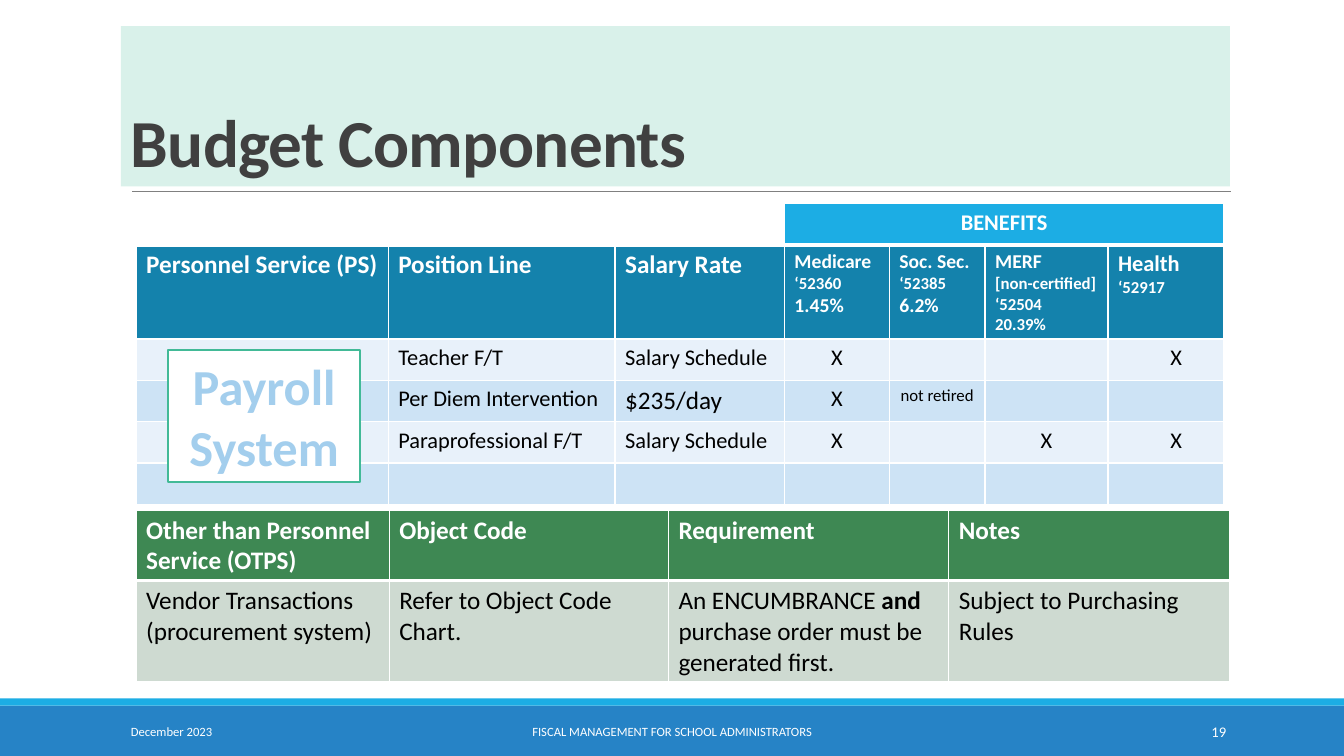
from lxml import etree
from pptx import Presentation
from pptx.dml.color import RGBColor
from pptx.enum.shapes import MSO_CONNECTOR, MSO_SHAPE
from pptx.enum.text import MSO_ANCHOR, PP_ALIGN
from pptx.oxml.ns import qn
from pptx.util import Pt

RECT, STRAIGHT = MSO_SHAPE.RECTANGLE, MSO_CONNECTOR.STRAIGHT
LEFT, CENTER, RIGHT = PP_ALIGN.LEFT, PP_ALIGN.CENTER, PP_ALIGN.RIGHT
TOP, MIDDLE, BOTTOM = MSO_ANCHOR.TOP, MSO_ANCHOR.MIDDLE, MSO_ANCHOR.BOTTOM

WHITE, BLACK = "FFFFFF", "000000"
PS_HEAD, PS_LIGHT, PS_DARK = "1482AC", "E8F1FA", "CDE3F5"
SKY, BLUE = "1CADE4", "2683C6"
OTPS_HEAD, OTPS_BODY = "3E8853", "CEDAD1"

PS_COLS = [250, 225, 168, 104, 95, 122, 115]
PS_ROWS = [41, 93, 41, 41, 41, 41]
# Each cell lists its paragraphs as (text, size)
PS_HEADERS = [
    [("Personnel Service (PS)", 18)],
    [("Position Line", 18)],
    [("Salary Rate", 18)],
    [("Medicare", 14), ("‘52360", 12), ("1.45%", 14)],
    [("Soc. Sec.", 14), ("‘52385", 12), ("6.2%", 14)],
    [("MERF", 14), ("[non-certified]", 12), ("‘52504", 12), ("20.39%", 12)],
    [("Health", 16), ("‘52917", 12)],
]
PS_POSITIONS = [
    ["", "Teacher F/T", "Salary Schedule", "X", "", "", "X"],
    ["", "Per Diem Intervention", "$235/day", "X", "not retired", "", ""],
    ["", "Paraprofessional F/T", "Salary Schedule", "X", "", "X", "X"],
    [""] * 7,
]
PS_SIZES = {"$235/day": 18, "not retired": 12}

OTPS_COLS = [251, 277, 278, 279]
OTPS_ROWS = [70, 100]
OTPS_HEADERS = ["Other than Personnel Service (OTPS)", "Object Code",
                "Requirement", "Notes"]
# Asterisks enclose bold words
OTPS_DETAILS = ["Vendor Transactions (procurement system)",
                "Refer to Object Code Chart.",
                "An ENCUMBRANCE *and* purchase order must be generated first.",
                "Subject to Purchasing Rules"]


def px(n):
    return n * 9144


def rgb(color):
    return RGBColor.from_string(color)


def write(tf, paragraphs, color, bold=False, align=LEFT, anchor=TOP):
    tf.word_wrap = True
    tf.vertical_anchor = anchor
    for i, (text, size) in enumerate(paragraphs):
        p = tf.paragraphs[0] if i == 0 else tf.add_paragraph()
        p.alignment = align
        p.font.size = Pt(size)
        for j, part in enumerate(text.split("*")):
            r = p.add_run()
            r.text = part
            r.font.name, r.font.size = "Calibri", Pt(size)
            r.font.bold = bold or j % 2 == 1
            r.font.color.rgb = rgb(color)


def add_box(s, box, fill, line=None):
    sp = s.shapes.add_shape(RECT, *map(px, box))
    sp.shadow.inherit = False
    sp.fill.solid()
    sp.fill.fore_color.rgb = rgb(fill)
    if line:
        sp.line.color.rgb = rgb(line)
        sp.line.width = Pt(1.25)
    else:
        sp.line.fill.background()
    return sp


def add_label(s, box, text, size, align):
    tb = s.shapes.add_textbox(*map(px, box))
    write(tb.text_frame, [(text, size)], WHITE, align=align, anchor=MIDDLE)


def add_grid(s, left, top, cols, rows):
    frame = s.shapes.add_table(len(rows), len(cols), px(left), px(top),
                               px(sum(cols)), px(sum(rows)))
    table = frame.table
    table.first_row = table.horz_banding = False
    for col, width in zip(table.columns, cols):
        col.width = px(width)
    for row, height in zip(table.rows, rows):
        row.height = px(height)
    return table


def style_cell(cell, fill, bottom=1):
    if fill:
        cell.fill.solid()
        cell.fill.fore_color.rgb = rgb(fill)
    else:
        cell.fill.background()
    # White borders come before the fill in the cell properties
    tcPr = cell._tc.get_or_add_tcPr()
    for i, side in enumerate("LRTB"):
        width = bottom if side == "B" else 1
        ln = etree.Element(qn(f"a:ln{side}"), w=str(Pt(width)))
        solid = etree.SubElement(ln, qn("a:solidFill"))
        etree.SubElement(solid, qn("a:srgbClr"), val=WHITE)
        tcPr.insert(i, ln)


def add_title(s, left, top, width, height):
    sp = add_box(s, (left, top, width, height), "D9F1EA")
    write(sp.text_frame, [("Budget Components", 48)], "404040", True,
          anchor=BOTTOM)
    p = sp.text_frame.paragraphs[0]
    p.line_spacing = 0.85
    p.runs[0].font._element.set("spc", "-50")
    # Rule under the title
    y = px(top + height + 5)
    rule = s.shapes.add_connector(STRAIGHT, px(left + 11), y,
                                  px(left + width + 1), y)
    rule.line.color.rgb = rgb("808080")
    rule.line.width = Pt(0.5)
    etree.SubElement(rule._element.spPr, qn("a:effectLst"))


def add_personnel(s, left, top):
    table = add_grid(s, left, top, PS_COLS, PS_ROWS)
    # Benefits band over the last four columns
    for c in range(len(PS_COLS)):
        style_cell(table.cell(0, c), SKY if c > 2 else None, 3)
    table.cell(0, 3).merge(table.cell(0, 6))
    write(table.cell(0, 3).text_frame, [("BENEFITS", 16)], WHITE, True, CENTER)
    # Column headings
    for c, paragraphs in enumerate(PS_HEADERS):
        cell = table.cell(1, c)
        style_cell(cell, PS_HEAD)
        write(cell.text_frame, paragraphs, WHITE, True)
    # Positions in banded rows
    for r, values in enumerate(PS_POSITIONS):
        for c, text in enumerate(values):
            cell = table.cell(r + 2, c)
            style_cell(cell, PS_DARK if r % 2 else PS_LIGHT)
            if c == 6:
                cell.margin_left = px(30)
            if text:
                write(cell.text_frame, [(text, PS_SIZES.get(text, 16))], BLACK,
                      align=CENTER if c > 2 else LEFT)
    # Payroll label over the first column
    sp = add_box(s, (left + 32, top + 145, 190, 131), WHITE, "42BA97")
    write(sp.text_frame, [("Payroll System", 36)], "A3CEED", True, CENTER,
          MIDDLE)


def add_other(s, left, top):
    table = add_grid(s, left, top, OTPS_COLS, OTPS_ROWS)
    for c, (header, detail) in enumerate(zip(OTPS_HEADERS, OTPS_DETAILS)):
        head, body = table.cell(0, c), table.cell(1, c)
        style_cell(head, OTPS_HEAD, 3)
        write(head.text_frame, [(header, 18)], WHITE, True)
        style_cell(body, OTPS_BODY)
        write(body.text_frame, [(detail, 18)], BLACK)


def add_footer(s, left, top, width, height):
    add_box(s, (left, top + 7, width, height - 7), BLUE)
    add_box(s, (left, top, width, 7), SKY)
    y = top + 13
    add_label(s, (left + 120, y, 270, 40), "December 2023", 9, LEFT)
    add_label(s, (left + 403, y, 527, 40),
              "FISCAL MANAGEMENT FOR SCHOOL ADMINISTRATORS", 9, CENTER)
    add_label(s, (left + 1083, y, 143, 40), "19", 10.5, RIGHT)


def main():
    prs = Presentation()
    prs.slide_width, prs.slide_height = px(1333), px(750)
    s = prs.slides.add_slide(prs.slide_layouts[6])
    add_footer(s, 0, 693, 1333, 57)
    add_title(s, 120, 26, 1100, 159)
    add_personnel(s, 135, 202)
    add_other(s, 135, 506)
    prs.save("out.pptx")


if __name__ == "__main__":
    main()
